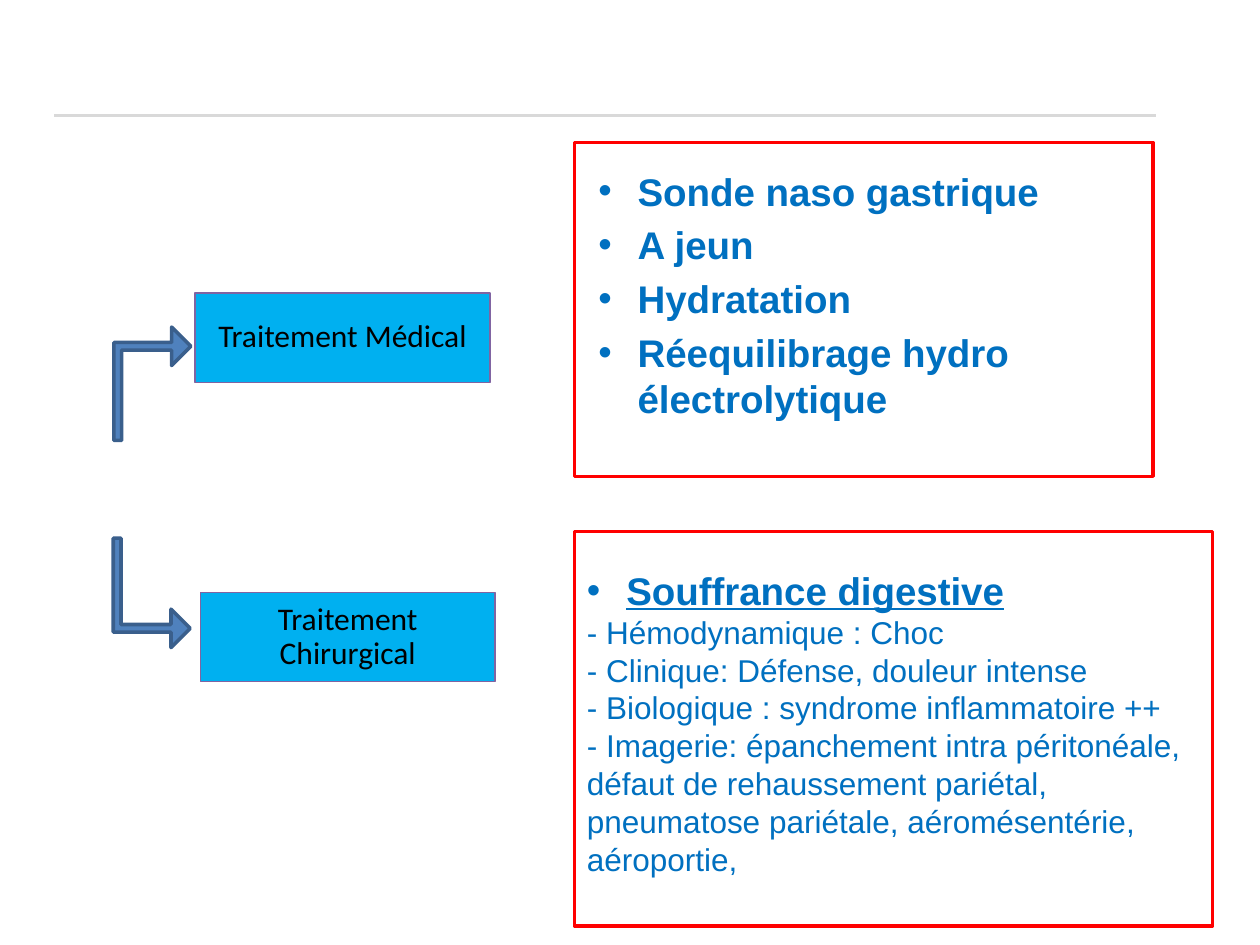
import pptx
import pptx.util
import pptx.dml.color
import pptx.enum.shapes
import pptx.enum.text
import pptx.oxml.ns
import lxml.etree

Pt = pptx.util.Pt
RGB = pptx.dml.color.RGBColor
Kind = pptx.enum.shapes.MSO_SHAPE
Align = pptx.enum.text.PP_ALIGN
Anchor = pptx.enum.text.MSO_ANCHOR
Fit = pptx.enum.text.MSO_AUTO_SIZE
qn = pptx.oxml.ns.qn

BLACK = RGB(0x00, 0x00, 0x00)
WHITE = RGB(0xFF, 0xFF, 0xFF)
GREY = RGB(0xD9, 0xD9, 0xD9)
RED = RGB(0xFF, 0x00, 0x00)
TEXT = RGB(0x00, 0x70, 0xC0)
CYAN = RGB(0x00, 0xB0, 0xF0)
PURPLE = RGB(0x80, 0x64, 0xA2)
STEEL = RGB(0x4F, 0x81, 0xBD)
NAVY = RGB(0x3A, 0x5F, 0x8C)

CARE = ["Sonde naso gastrique", "A jeun", "Hydratation",
        "Réequilibrage hydro électrolytique"]
SIGNS = ["- Hémodynamique : Choc",
         "- Clinique: Défense, douleur intense",
         "- Biologique : syndrome inflammatoire ++",
         "- Imagerie: épanchement intra péritonéale, défaut de rehaussement "
         "pariétal, pneumatose pariétale, aéromésentérie, aéroportie,"]


def add_box(shapes, kind, box, fill, line, width):
    shape = shapes.add_shape(kind, *map(Pt, box))
    shape.shadow.inherit = False
    if fill is None:
        shape.fill.background()
    else:
        shape.fill.solid()
        shape.fill.fore_color.rgb = fill
    shape.line.color.rgb = line
    shape.line.width = Pt(width)
    return shape


def add_run(para, text, size, name="Arial", color=TEXT, bold=False, under=False):
    run = para.add_run()
    run.text = text
    font = run.font
    font.size = Pt(size)
    font.name = name
    font.color.rgb = color
    font.bold = bold
    font.underline = under


def next_para(frame):
    first = frame.paragraphs[0]
    para = frame.add_paragraph() if first.runs else first
    para.alignment = Align.LEFT
    return para


def add_bullet(para, left):
    props = para._p.get_or_add_pPr()
    props.set("marL", str(Pt(left)))
    props.set("indent", str(-Pt(22.5)))
    font = lxml.etree.SubElement(props, qn("a:buFont"))
    font.set("typeface", "Arial")
    mark = lxml.etree.SubElement(props, qn("a:buChar"))
    mark.set("char", "•")


def add_rule(slide, left, top, width):
    ends = map(Pt, (left, top, left + width, top))
    rule = slide.shapes.add_connector(pptx.enum.shapes.MSO_CONNECTOR.STRAIGHT, *ends)
    rule.line.color.rgb = GREY
    rule.line.width = Pt(1.5)
    lxml.etree.SubElement(rule._element.spPr, qn("a:effectLst"))


def add_branch(slide, text, label, arrow, flip):
    shapes = slide.shapes.add_group_shape().shapes
    bend = add_box(shapes, Kind.BENT_UP_ARROW, arrow, STEEL, NAVY, 2)
    bend.rotation = 90
    for index, value in enumerate((0.1, 0.25, 0.25)):
        bend.adjustments[index] = value
    if flip:
        bend._element.spPr.xfrm.set("flipH", "1")
    left, top = label
    rect = add_box(shapes, Kind.RECTANGLE, (left, top, 168.5, 51), CYAN, PURPLE, 0.75)
    frame = rect.text_frame
    frame.word_wrap = True
    frame.vertical_anchor = Anchor.MIDDLE
    frame.margin_left = frame.margin_right = Pt(5)
    frame.margin_top = frame.margin_bottom = Pt(3)
    para = frame.paragraphs[0]
    para.alignment = Align.CENTER
    para.line_spacing = 0.9
    para.space_before = Pt(10)
    add_run(para, text, 18, "Calibri", BLACK)


def add_care(slide, left, top, width, height):
    shapes = slide.shapes.add_group_shape().shapes
    area = (left - 29.5, top + 10.8, width + 84.2, height - 4.3)
    rect = add_box(shapes, Kind.RECTANGLE, area, None, WHITE, 0.75)
    frame = rect.text_frame
    frame.word_wrap = True
    frame.vertical_anchor = Anchor.TOP
    for text in CARE:
        para = next_para(frame)
        para.level = 1
        para.space_before = Pt(4.4)
        add_bullet(para, 58.5)
        add_run(para, text, 22, bold=True)
    add_box(shapes, Kind.RECTANGLE, (left, top, width, height), None, RED, 2)


def add_signs(slide, left, top, width, height):
    add_box(slide.shapes, Kind.RECTANGLE, (left, top, width, height), None, RED, 2)
    area = (left, top + 16.5, width - 3, height - 17.3)
    frame = slide.shapes.add_textbox(*map(Pt, area)).text_frame
    frame.word_wrap = True
    frame.auto_size = Fit.SHAPE_TO_FIT_TEXT
    para = next_para(frame)
    add_bullet(para, 22.5)
    add_run(para, "Souffrance digestive", 22, bold=True, under=True)
    for text in SIGNS:
        add_run(next_para(frame), text, 18)


def main():
    deck = pptx.Presentation()
    deck.slide_width, deck.slide_height = Pt(720), Pt(540)
    slide = deck.slides.add_slide(deck.slide_layouts[6])
    add_rule(slide, 31, 66, 629.5)
    add_branch(slide, "Traitement Médical", (111.5, 167.5), (54.7, 197.3, 64.8, 44), True)
    add_care(slide, 328.3, 81.4, 330.5, 190.8)
    add_branch(slide, "Traitement Chirurgical", (114.5, 338.4), (55.4, 316.8, 62.6, 44), False)
    add_signs(slide, 328.3, 303.8, 364.5, 225.4)
    deck.save("out.pptx")


if __name__ == "__main__":
    main()
